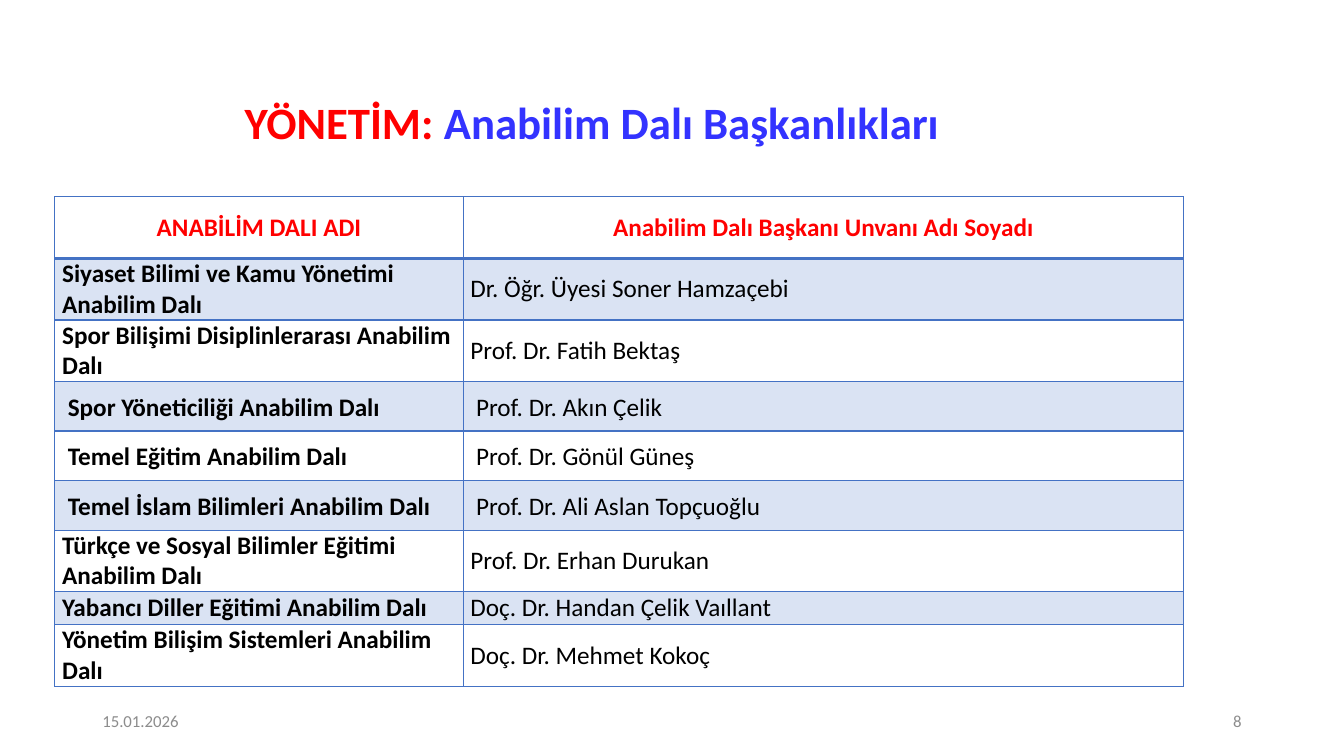
from lxml import etree
from pptx import Presentation
from pptx import util as u
from pptx.dml.color import RGBColor
from pptx.enum import text as t
from pptx.oxml.ns import qn

COLORS = {"red": "FF0000", "blue": "3333FF", "grid": "4472C4",
          "band": "DAE3F3", "black": "000000", "grey": "8C8C8C"}


def format_run(run, size, color, bold=False):
    run.font.name = "Calibri"
    run.font.size = u.Pt(size)
    run.font.bold = bold
    run.font.color.rgb = RGBColor.from_string(COLORS[color])


def add_border(cell, side, width):
    line = etree.SubElement(cell._tc.get_or_add_tcPr(), qn(f"a:ln{side}"), w=str(u.Pt(width)))
    fill = etree.SubElement(line, qn("a:solidFill"))
    etree.SubElement(fill, qn("a:srgbClr"), val=COLORS["grid"])


prs = Presentation()
prs.slide_width, prs.slide_height = u.Pt(960), u.Pt(540)
slide = prs.slides.add_slide(prs.slide_layouts[5])

# Title
title = slide.shapes.title
title.left, title.top, title.width, title.height = u.Pt(0), u.Pt(62.6), u.Pt(846), u.Pt(54)
title.text_frame.auto_size = t.MSO_AUTO_SIZE.NONE
title.text_frame.vertical_anchor = t.MSO_ANCHOR.MIDDLE
heading = title.text_frame.paragraphs[0]
heading.alignment = t.PP_ALIGN.CENTER
heading.line_spacing = 0.9
for words, color in [("YÖNETİM: ", "red"), ("Anabilim Dalı Başkanlıkları", "blue")]:
    part = heading.add_run()
    part.text = words
    format_run(part, 32, color, True)

# Departments: name, head, row height, line spacing
departments = [
    ("ANABİLİM DALI ADI", "Anabilim Dalı Başkanı Unvanı Adı Soyadı", 44, 1),
    ("Siyaset Bilimi ve Kamu Yönetimi Anabilim Dalı", "Dr. Öğr. Üyesi Soner Hamzaçebi", 35.4, 1),
    ("Spor Bilişimi Disiplinlerarası Anabilim Dalı", "Prof. Dr. Fatih Bektaş", 35.4, 1),
    (" Spor Yöneticiliği Anabilim Dalı", " Prof. Dr. Akın Çelik", 35.4, 1.07),
    (" Temel Eğitim Anabilim Dalı", " Prof. Dr. Gönül Güneş", 35.4, 1.07),
    (" Temel İslam Bilimleri Anabilim Dalı", " Prof. Dr. Ali Aslan Topçuoğlu", 35.4, 1.07),
    ("Türkçe ve Sosyal Bilimler Eğitimi Anabilim Dalı", "Prof. Dr. Erhan Durukan", 35.4, 1),
    ("Yabancı Diller Eğitimi Anabilim Dalı", "Doç. Dr. Handan Çelik Vaıllant", 23.6, 1),
    ("Yönetim Bilişim Sistemleri Anabilim Dalı", "Doç. Dr. Mehmet Kokoç", 23.6, 1),
]

# Table of department heads
heads = slide.shapes.add_table(len(departments), 2, u.Pt(39.2), u.Pt(140.6),
                               u.Pt(806.4), u.Pt(303.6)).table
heads.horz_banding = False
heads.columns[0].width, heads.columns[1].width = u.Pt(291.6), u.Pt(514.8)
for row, (*entries, height, spacing) in enumerate(departments):
    heads.rows[row].height = u.Pt(height)
    for col, entry in enumerate(entries):
        cell = heads.cell(row, col)
        cell.margin_left = cell.margin_right = u.Pt(5.2)
        cell.margin_top = cell.margin_bottom = u.Pt(0)
        cell.vertical_anchor = t.MSO_ANCHOR.MIDDLE
        for side in "LRTB":
            header_rule = (row, side) in [(0, "B"), (1, "T")]
            add_border(cell, side, 2 if header_rule else 1)
        if row % 2:
            cell.fill.solid()
            cell.fill.fore_color.rgb = RGBColor.from_string(COLORS["band"])
        else:
            cell.fill.background()
        cell.text_frame.text = entry
        line = cell.text_frame.paragraphs[0]
        line.alignment = t.PP_ALIGN.LEFT if row else t.PP_ALIGN.CENTER
        line.line_spacing = float(spacing)
        format_run(line.runs[0], 18, "black" if row else "red", row == 0 or col == 0)

# Date and page number
for words, left, align in [("15.01.2026", 66, t.PP_ALIGN.LEFT), ("8", 678, t.PP_ALIGN.RIGHT)]:
    footer = slide.shapes.add_textbox(u.Pt(left), u.Pt(500.5), u.Pt(216), u.Pt(28.8)).text_frame
    footer.word_wrap = True
    footer.vertical_anchor = t.MSO_ANCHOR.MIDDLE
    footer.text = words
    footer.paragraphs[0].alignment = align
    format_run(footer.paragraphs[0].runs[0], 12, "grey")

prs.save("out.pptx")
